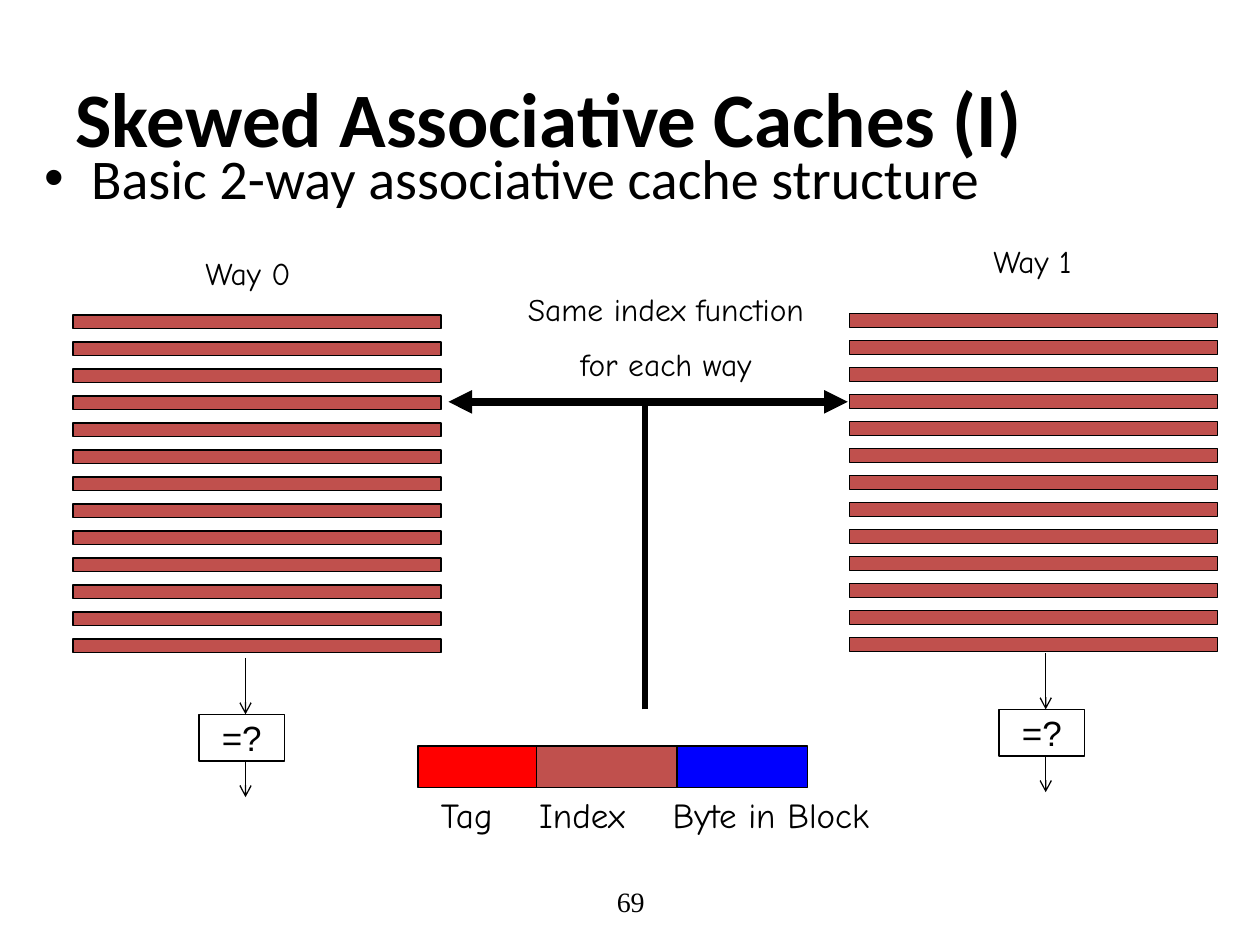
from dataclasses import dataclass

from lxml import etree
from pptx import Presentation
from pptx.dml.color import RGBColor
from pptx.enum.shapes import MSO_CONNECTOR, MSO_SHAPE
from pptx.enum.text import MSO_ANCHOR, PP_ALIGN
from pptx.oxml.ns import qn
from pptx.util import Cm, Pt

RECT = MSO_SHAPE.RECTANGLE
LINE = MSO_CONNECTOR.STRAIGHT
LEFT, CENTER = PP_ALIGN.LEFT, PP_ALIGN.CENTER
TOP, MIDDLE = MSO_ANCHOR.TOP, MSO_ANCHOR.MIDDLE

HUES = {"ink": "000000", "tag": "FF0000", "index": "C0504D", "byte": "0000FF"}
HAND = "Comic Neue"
ROWS = 13
PITCH = 6.53 / (ROWS - 1)


@dataclass
class Font:
    name: str
    size: float
    bold: bool = False


@dataclass
class Box:
    x: float
    y: float
    w: float
    h: float

    def size(self) -> tuple:
        return Cm(self.x), Cm(self.y), Cm(self.w), Cm(self.h)


@dataclass
class Way:
    name: str
    label: Box
    row: Box
    test: Box


@dataclass
class Field:
    hue: str
    box: Box


WAYS = [
    Way("Way 0", Box(3.78, 5, 2.44, 1.02), Box(1.47, 6.35, 7.42, 0.28), Box(4.01, 14.4, 1.73, 0.94)),
    Way("Way 1", Box(19.66, 4.75, 2.31, 1.02), Box(17.12, 6.32, 7.42, 0.28), Box(20.14, 14.3, 1.73, 0.94)),
]
FIELDS = [
    Field("tag", Box(8.43, 15.04, 7.19, 0.84)),
    Field("index", Box(10.82, 15.04, 2.82, 0.84)),
    Field("byte", Box(13.66, 15.04, 2.62, 0.84)),
]


def color(hue: str) -> RGBColor:
    return RGBColor.from_string(HUES[hue])


def write(shape, lines: list[str], font: Font, align=LEFT, anchor=TOP, wrap=True):
    frame = shape.text_frame
    frame.word_wrap = wrap
    frame.vertical_anchor = anchor
    frame.text = "\n".join(lines)
    for spot, para in enumerate(frame.paragraphs):
        para.alignment = align
        para.space_before = Pt(10 if spot else 0)
        para.font.name = font.name
        para.font.size = Pt(font.size)
        para.font.bold = font.bold
        para.font.color.rgb = color("ink")
    return frame.paragraphs[0]


def add_text(slide, box: Box, lines: list[str], font: Font, **look):
    return write(slide.shapes.add_textbox(*box.size()), lines, font, **look)


def add_rect(shapes, box: Box, hue: str = ""):
    rect = shapes.add_shape(RECT, *box.size())
    rect.shadow.inherit = False
    if hue:
        rect.fill.solid()
        rect.fill.fore_color.rgb = color(hue)
    else:
        rect.fill.background()
    rect.line.color.rgb = color("ink")
    rect.line.width = Pt(0.75)
    return rect


def add_line(slide, x1: float, y1: float, x2: float, y2: float,
             width: float = 0.75, head: str = "", tail: str = "") -> None:
    line = slide.shapes.add_connector(LINE, Cm(x1), Cm(y1), Cm(x2), Cm(y2))
    line.line.color.rgb = color("ink")
    line.line.width = Pt(width)
    props = line.element.spPr
    for tag, kind in (("a:headEnd", head), ("a:tailEnd", tail)):
        if kind:
            etree.SubElement(props.find(qn("a:ln")), qn(tag), type=kind)
    etree.SubElement(props, qn("a:effectLst"))


def add_bullet(para, indent: float) -> None:
    props = para._p.get_or_add_pPr()
    props.set("marL", str(Cm(indent)))
    props.set("indent", str(-Cm(indent)))
    etree.SubElement(props, qn("a:buFont"), typeface="Arial")
    etree.SubElement(props, qn("a:buChar"), char="•")
    order_font(props)


def add_tabs(para, stops: list[float]) -> None:
    props = para._p.get_or_add_pPr()
    tabs = etree.SubElement(props, qn("a:tabLst"))
    for stop in stops:
        etree.SubElement(tabs, qn("a:tab"), pos=str(Cm(stop)), algn="l")
    order_font(props)


def order_font(props) -> None:
    props.append(props.find(qn("a:defRPr")))


def draw_way(slide, way: Way) -> None:
    add_text(slide, way.label, [way.name], Font(HAND, 18), align=CENTER, anchor=MIDDLE, wrap=False)
    group = slide.shapes.add_group_shape()
    row = way.row
    for step in range(ROWS):
        add_rect(group.shapes, Box(row.x, row.y + step * PITCH, row.w, row.h), "index")
    test = way.test
    write(add_rect(slide.shapes, test), ["=?"], Font("Arial", 20), align=CENTER, anchor=MIDDLE, wrap=False)
    mid, end = test.x + 0.94, test.y + test.h
    add_line(slide, mid, test.y - 1.14, mid, test.y, tail="arrow")
    add_line(slide, mid, end, mid, end + 0.73, tail="arrow")


def main() -> None:
    deck = Presentation()
    deck.slide_width, deck.slide_height = Cm(25.4), Cm(19.05)
    slide = deck.slides.add_slide(deck.slide_layouts[5])

    title = slide.shapes.title
    title.left, title.top, title.width, title.height = Box(1.27, 0.76, 22.86, 3.18).size()
    write(title, ["Skewed Associative Caches (I)"], Font("Calibri", 44, True), anchor=MIDDLE)
    point = add_text(slide, Box(0.64, 2.77, 23.93, 14.43),
                     ["Basic 2-way associative cache structure"], Font("Calibri", 32))
    add_bullet(point, 0.95)
    add_text(slide, Box(8.69, 17.65, 8.05, 1.02), ["69"], Font("Times New Roman", 16),
             align=CENTER, anchor=MIDDLE)

    for way in WAYS:
        draw_way(slide, way)
    for field in FIELDS:
        add_rect(slide.shapes, field.box, field.hue)
    names = add_text(slide, Box(8.64, 15.88, 10.19, 1.12),
                     ["Tag\tIndex\tByte in Block"], Font(HAND, 20))
    add_tabs(names, [1.98, 4.67])

    add_line(slide, 13, 14.3, 13, 8.05, width=3)
    add_line(slide, 9.04, 8.1, 17.09, 8.1, width=4.5, head="triangle", tail="triangle")
    add_text(slide, Box(10.11, 5.69, 6.63, 2.18), ["Same index function", "for each way"],
             Font(HAND, 18), align=CENTER, anchor=MIDDLE, wrap=False)

    deck.save("out.pptx")


if __name__ == "__main__":
    main()
